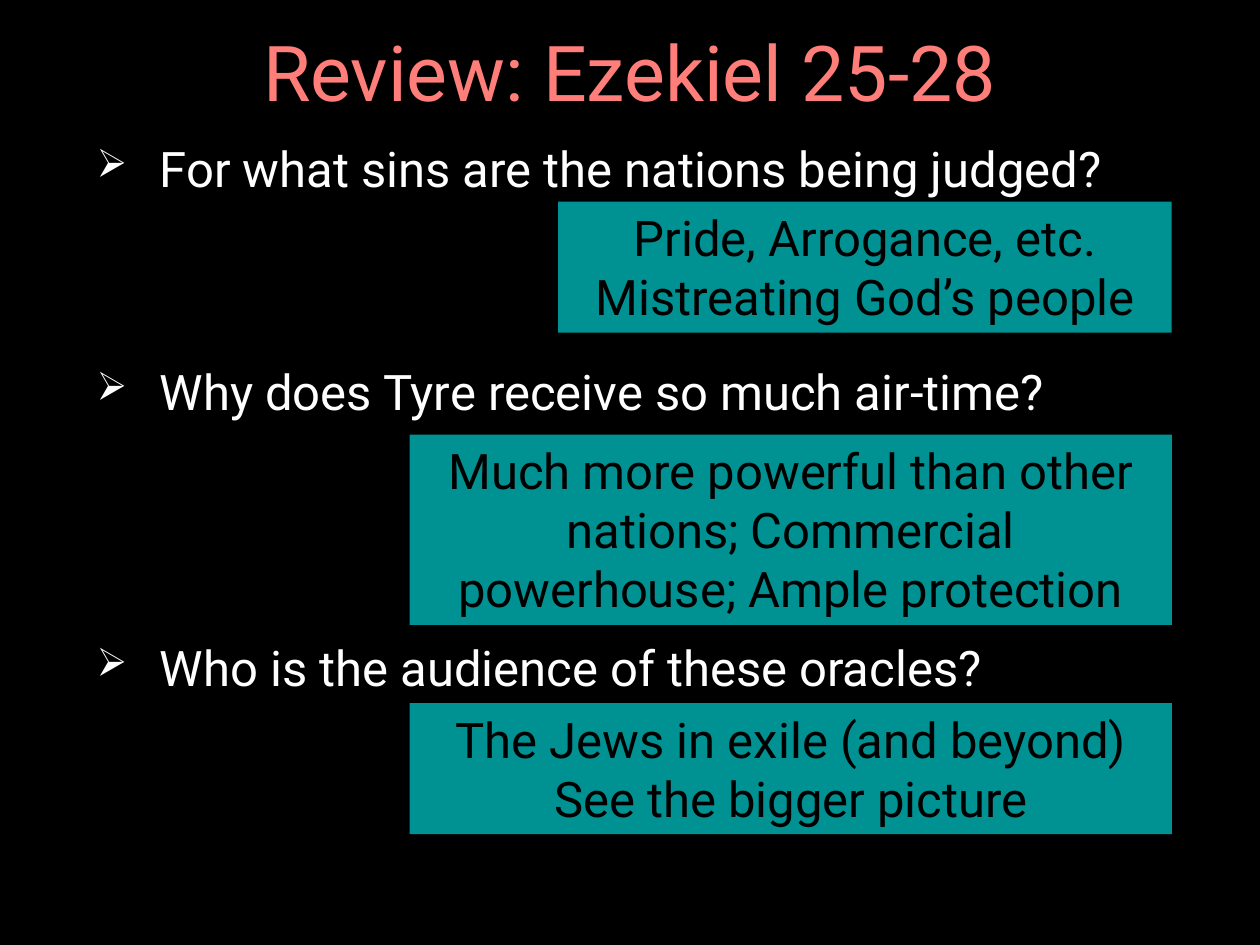
"""Builds the Ezekiel 25-28 review slide with three questions and their answers."""
import pptx
import pptx.dml.color
import pptx.enum.shapes
import pptx.enum.text
import pptx.oxml
import pptx.oxml.ns
import pptx.util

Pt = pptx.util.Pt
ALIGN = pptx.enum.text.PP_ALIGN
ANCHOR = pptx.enum.text.MSO_ANCHOR
AUTO = pptx.enum.text.MSO_AUTO_SIZE

HEADING = "Review: Ezekiel 25-28"
QUESTIONS = [
    ("For what sins are the nations being judged?", 90),
    ("Why does Tyre receive so much air-time?", 120),
    ("Who is the audience of these oracles?", 90),
]
ANSWERS = [
    (319, 115.2, 74.9, ["Pride, Arrogance, etc.", "Mistreating God’s people"]),
    (234, 248.4, 108.7, ["Much more powerful than other nations; "
                         "Commercial powerhouse; Ample protection"]),
    (234, 401.8, 74.9, ["The Jews in exile (and beyond)", "See the bigger picture"]),
]
COLORS = {"background": "000000", "heading": "FF7E79", "question": "FFFFFF",
          "panel": "009193", "answer": "000000"}
FONT = "Roboto"
RIGHT_EDGE = 669.6
INDENT = 36
BULLET = ('<a:buSzPct val="80000"/>', '<a:buChar char="➢"/>')


def color(part):
    return pptx.dml.color.RGBColor.from_string(COLORS[part])


def apply(target, values):
    for name, value in values.items():
        setattr(target, name, value)


def fill_solid(fill, part):
    fill.solid()
    fill.fore_color.rgb = color(part)


def add_bullet(paragraph):
    properties = paragraph._p.get_or_add_pPr()
    properties.set("marL", str(Pt(INDENT)))
    properties.set("indent", str(-Pt(INDENT)))
    for xml in BULLET:
        namespace = pptx.oxml.ns.nsdecls("a")
        properties.append(pptx.oxml.parse_xml(xml.replace(" ", f" {namespace} ", 1)))


def write(frame, lines, part, size, layout, bulleted=False):
    for index, line in enumerate(lines):
        paragraph = frame.paragraphs[0] if index == 0 else frame.add_paragraph()
        paragraph.text = line
        if bulleted:
            add_bullet(paragraph)
        apply(paragraph, layout)
        for run in paragraph.runs:
            apply(run.font, {"name": FONT, "size": Pt(size)})
            run.font.color.rgb = color(part)


def main():
    deck = pptx.Presentation()
    apply(deck, {"slide_width": Pt(720), "slide_height": Pt(540)})
    slide = deck.slides.add_slide(deck.slide_layouts[5])
    fill_solid(slide.background.fill, "background")

    heading = slide.shapes.title
    apply(heading, {"left": Pt(49.7), "top": Pt(11.5),
                    "width": Pt(620.6), "height": Pt(64.8)})
    apply(heading.text_frame, {"vertical_anchor": ANCHOR.MIDDLE, "word_wrap": True,
                               "auto_size": AUTO.NONE})
    write(heading.text_frame, [HEADING], "heading", 44,
          {"alignment": ALIGN.CENTER, "line_spacing": 0.9})

    questions = slide.shapes.add_textbox(Pt(48.2), Pt(75.6), Pt(620.6), Pt(412.6)).text_frame
    questions.word_wrap = True
    write(questions, [text for text, gap in QUESTIONS], "question", 28,
          {"alignment": ALIGN.LEFT}, bulleted=True)
    for index, (text, gap) in enumerate(QUESTIONS):
        apply(questions.paragraphs[index],
              {"space_before": Pt(4 if index else 0), "space_after": Pt(gap)})

    for left, top, height, lines in ANSWERS:
        panel = slide.shapes.add_shape(pptx.enum.shapes.MSO_SHAPE.RECTANGLE, Pt(left),
                                       Pt(top), Pt(RIGHT_EDGE - left), Pt(height))
        panel.shadow.inherit = False
        fill_solid(panel.fill, "panel")
        panel.line.fill.background()
        apply(panel.text_frame, {"word_wrap": True, "vertical_anchor": ANCHOR.TOP,
                                 "auto_size": AUTO.SHAPE_TO_FIT_TEXT})
        write(panel.text_frame, lines, "answer", 28, {"alignment": ALIGN.CENTER})

    deck.save("out.pptx")


if __name__ == "__main__":
    main()
